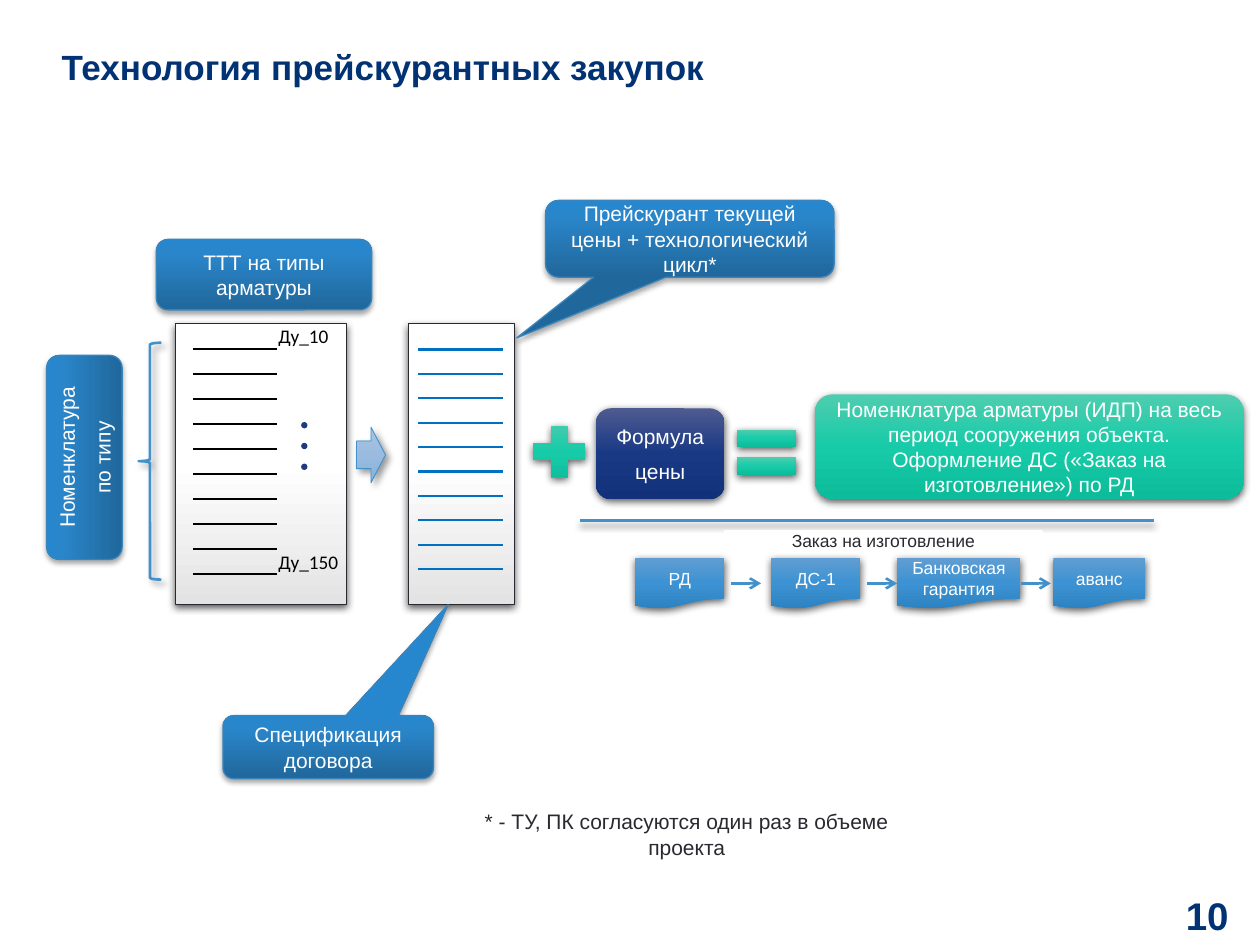
from dataclasses import dataclass
from typing import NamedTuple, Optional

from lxml.etree import SubElement
from pptx import Presentation
from pptx.dml.color import RGBColor as RGB
from pptx.enum.shapes import MSO_CONNECTOR as Connector, MSO_SHAPE as Geo
from pptx.enum.text import MSO_ANCHOR as Anchor, PP_ALIGN as Align
from pptx.oxml.ns import qn
from pptx.util import Inches, Pt


class Gradient(NamedTuple):
    stops: tuple
    angle: int = 90


class Shadow(NamedTuple):
    alpha: int
    blur: float
    distance: float
    angle: int = 90


class Line(NamedTuple):
    color: str
    width: float


class Look(NamedTuple):
    fill: object = None
    line: Optional[Line] = None
    shadow: Optional[Shadow] = None


GREEN = Gradient(((0, "4ECDAF"), (50, "17CBA8"), (100, "0DBC9A")))
DEEP = Shadow(63, 4.5, 1.5)
SOFT = Shadow(40, 4, 3, 45)


@dataclass(frozen=True)
class Theme:
    font: str = "Arial"
    table_font: str = "Calibri"
    heading: str = "003274"
    ink: str = "29292F"
    white: str = "FFFFFF"
    black: str = "000000"
    price_line: str = "0070C0"
    number_size: int = 22
    title_size: int = 20
    body_size: int = 12
    table_size: int = 11
    step_size: int = 10
    empty_size: int = 8
    no_grid: str = "{2D5ABB26-0587-4C30-8999-92F81FD0307C}"
    accent: Line = Line("4391CB", 1.5)
    rule_shadow: Shadow = Shadow(40, 4, 3)
    paper: Look = Look(Gradient(((0, "FFFFFF"), (50, "FFFFFF"), (100, "E3E3E3"))),
                       Line("29292F", 0.5), DEEP)
    label: Look = Look(Gradient(((0, "20679B"), (80, "2A86CA"), (100, "2787CE")), 270),
                       Line("3A84BC", 0.75), Shadow(35, 3.1, 1.8))
    arrow: Look = Look(Gradient(((0, "A8C5E3"), (50, "9ABBDE"), (100, "88B2DD"))),
                       Line("4391CB", 0.5), SOFT)
    step: Look = Look(Gradient(((0, "609DD2"), (50, "3C92D2"), (100, "2E83C2"))), None, DEEP)
    formula: Look = Look(Gradient(((0, "4E5B90"), (50, "193985"), (100, "12317A"))), None, DEEP)
    result: Look = Look(GREEN, None, DEEP)
    brace: Look = Look(None, Line("4391CB", 1.5), SOFT)
    dot: Look = Look("1E3B80")
    note: Look = Look("FFFFFF", Line("FFFFFF", 1))


THEME = Theme()


class Label(NamedTuple):
    geo: Geo
    at: tuple
    lines: tuple
    look: Look = THEME.label
    adjustments: tuple = ()
    rotation: int = 0


class Step(NamedTuple):
    left: float
    width: float
    text: str


class PriceList(NamedTuple):
    sheet: tuple
    at: tuple
    color: str
    notes: dict


def style_font(font, size, color, bold=False, name=THEME.font) -> None:
    for key, value in {"name": name, "size": Pt(size), "bold": bold}.items():
        setattr(font, key, value)
    font.color.rgb = RGB.from_string(color)


def write(frame, lines, size, color, align=Align.CENTER, after=6, anchor=Anchor.MIDDLE,
          inset=None, bold=False) -> None:
    settings = {"word_wrap": True, "vertical_anchor": anchor}
    if inset is not None:
        settings |= {f"margin_{side}": Inches(inset) for side in ("left", "top", "right", "bottom")}
    for key, value in settings.items():
        setattr(frame, key, value)
    for index, line in enumerate(lines):
        paragraph = frame.add_paragraph() if index else frame.paragraphs[0]
        paragraph.alignment, paragraph.space_after = align, Pt(after)
        run = paragraph.add_run()
        run.text = line
        style_font(run.font, size, color, bold)


def add_color(parent, color, alpha=None) -> None:
    node = SubElement(parent, qn("a:srgbClr"), val=color)
    if alpha is not None:
        SubElement(node, qn("a:alpha"), val=str(alpha * 1000))


def add_shadow(properties, shadow: Optional[Shadow]) -> None:
    effects = properties.find(qn("a:effectLst"))
    if effects is None:
        effects = SubElement(properties, qn("a:effectLst"))
    if shadow:
        outer = SubElement(effects, qn("a:outerShdw"), blurRad=str(Pt(shadow.blur)),
                           dist=str(Pt(shadow.distance)), dir=str(shadow.angle * 60000),
                           algn="ctr", rotWithShape="0")
        add_color(outer, THEME.black, shadow.alpha)


def apply_gradient(shape, gradient: Gradient) -> None:
    shape.fill.gradient()
    node = shape._element.spPr.find(qn("a:gradFill"))
    node.set("rotWithShape", "1")
    for child in list(node):
        node.remove(child)
    stops = SubElement(node, qn("a:gsLst"))
    for position, color in gradient.stops:
        add_color(SubElement(stops, qn("a:gs"), pos=str(position * 1000)), color)
    SubElement(node, qn("a:lin"), ang=str(gradient.angle * 60000), scaled="0")


def draw(shapes, geo: Geo, at: tuple, look: Look):
    shape = shapes.add_shape(geo, *map(Inches, at))
    shape.shadow.inherit = False
    if isinstance(look.fill, Gradient):
        apply_gradient(shape, look.fill)
    elif look.fill:
        shape.fill.solid()
        shape.fill.fore_color.rgb = RGB.from_string(look.fill)
    else:
        shape.fill.background()
    if look.line:
        shape.line.color.rgb = RGB.from_string(look.line.color)
        shape.line.width = Pt(look.line.width)
    else:
        shape.line.fill.background()
    add_shadow(shape._element.spPr, look.shadow)
    return shape


def draw_line(shapes, left: float, right: float, y: float, arrow=False, shadow=None):
    line = shapes.add_connector(Connector.STRAIGHT, *map(Inches, (left, y, right, y)))
    line.line.color.rgb = RGB.from_string(THEME.accent.color)
    line.line.width = Pt(THEME.accent.width)
    if arrow:
        SubElement(line.line._get_or_add_ln(), qn("a:tailEnd"), type="arrow")
    add_shadow(line._element.spPr, shadow)
    return line


def draw_label(shapes, label: Label) -> None:
    shape = draw(shapes, label.geo, label.at, label.look)
    shape.rotation = label.rotation
    for index, value in enumerate(label.adjustments):
        shape.adjustments[index] = value
    write(shape.text_frame, label.lines, THEME.body_size, THEME.white)


def draw_price_list(shapes, prices: PriceList, rows=10, column=0.67) -> None:
    draw(shapes, Geo.RECTANGLE, prices.sheet, THEME.paper)
    left, top, height = prices.at
    columns = 2 if prices.notes else 1
    table = shapes.add_table(rows, columns, *map(Inches, (left, top, column * columns, height))).table
    table.first_row = table.horz_banding = False
    table._tbl.tblPr.find(qn("a:tableStyleId")).text = THEME.no_grid
    for row in range(rows):
        table.rows[row].height = Inches(height / rows)
        for col in range(columns):
            cell = table.cell(row, col)
            cell.fill.background()
            cell.vertical_anchor = Anchor.BOTTOM
            cell.margin_left = cell.margin_right = cell.margin_top = Inches(0.01)
            cell.margin_bottom = 0
            paragraph = cell.text_frame.paragraphs[0]
            if col and row in prices.notes:
                run = paragraph.add_run()
                run.text = prices.notes[row]
                style_font(run.font, THEME.table_size, THEME.black, name=THEME.table_font)
            else:
                paragraph._p.get_or_add_endParaRPr().set("sz", str(THEME.empty_size * 100))
        properties = table.cell(row, 0)._tc.get_or_add_tcPr()
        border = SubElement(properties, qn("a:lnB"), w=str(Pt(1.5)))
        add_color(SubElement(border, qn("a:solidFill")), prices.color)
        properties.insert(0, border)


def draw_steps(shapes, top=4.43, height=0.4) -> None:
    steps = (Step(5.04, 0.71, "РД"), Step(6.12, 0.71, "ДС-1"),
             Step(7.12, 0.98, "Банковская гарантия"), Step(8.36, 0.73, "аванс"))
    boxes = []
    for step in steps:
        box = draw(shapes, Geo.FLOWCHART_DOCUMENT, (step.left, top, step.width, height), THEME.step)
        write(box.text_frame, (step.text,), THEME.step_size, THEME.white, after=0)
        boxes.append(box)
    arrows = [draw_line(shapes, left, left + 0.24, top + height / 2, arrow=True)
              for left in (5.8, 6.88, 8.1)]
    guarantee = boxes[2]
    arrows[1].end_connect(guarantee, 1)
    arrows[2].begin_connect(guarantee, 3)


def main() -> None:
    deck = Presentation()
    deck.slide_width, deck.slide_height = Inches(10), Inches(7.5)
    shapes = deck.slides.add_slide(deck.slide_layouts[6]).shapes

    for at, text, size, align in (
            ((9.06, 7.06, 0.69, 0.41), "10", THEME.number_size, Align.RIGHT),
            ((0.49, 0, 8.26, 1.05), "Технология прейскурантных закупок", THEME.title_size, Align.LEFT)):
        box = shapes.add_textbox(*map(Inches, at))
        write(box.text_frame, (text,), size, THEME.heading, align, 0, inset=0, bold=True)

    draw_price_list(shapes, PriceList((1.39, 2.57, 1.36, 2.23), (1.53, 2.57, 1.99),
                                      THEME.black, {0: "Ду_10", 9: "Ду_150"}))
    draw_price_list(shapes, PriceList((3.24, 2.57, 0.84, 2.23), (3.32, 2.58, 1.94),
                                      THEME.price_line, {}))
    for index in range(3):
        draw(shapes, Geo.OVAL, (2.39, 3.35 + 0.165 * index, 0.05, 0.05), THEME.dot)
    draw(shapes, Geo.LEFT_BRACE, (1.1, 2.72, 0.18, 1.88), THEME.brace)
    draw(shapes, Geo.RIGHT_ARROW, (2.83, 3.39, 0.23, 0.44), THEME.arrow)
    draw(shapes, Geo.MATH_PLUS, (4.16, 3.31, 0.56, 0.55), THEME.result)
    equals = shapes.add_group_shape().shapes
    for top in (3.41, 3.63):
        draw(equals, Geo.RECTANGLE, (5.85, top, 0.47, 0.14), THEME.result)

    draw_line(shapes, 4.6, 9.16, 4.13, shadow=THEME.rule_shadow)
    for at, text, size in (
            ((3.79, 6.42, 3.32, 0.4), "* - ТУ, ПК согласуются один раз в объеме проекта", THEME.body_size),
            ((5.75, 4.21, 2.52, 0.17), "Заказ на изготовление", THEME.step_size)):
        note = draw(shapes, Geo.RECTANGLE, at, THEME.note)
        write(note.text_frame, (text,), size, THEME.ink, anchor=Anchor.TOP, inset=0)
    draw_steps(shapes)

    rounded, callout = Geo.ROUNDED_RECTANGLE, Geo.ROUNDED_RECTANGULAR_CALLOUT
    for label in (
            Label(rounded, (4.73, 3.24, 1.02, 0.72), ("Формула", "цены"), THEME.formula),
            Label(rounded, (6.47, 3.13, 3.4, 0.83),
                  ("Номенклатура арматуры (ИДП) на весь период сооружения объекта. "
                   "Оформление ДС («Заказ на изготовление») по РД",), THEME.result),
            Label(rounded, (-0.14, 3.33, 1.62, 0.6), ("Номенклатура", "по типу"), rotation=270),
            Label(rounded, (1.24, 1.9, 1.71, 0.56), ("ТТТ на типы арматуры",)),
            Label(callout, (4.33, 1.59, 2.29, 0.61),
                  ("Прейскурант текущей цены + технологический цикл*",), adjustments=(-0.6, 1.29, 0.17)),
            Label(callout, (1.77, 5.68, 1.67, 0.5), ("Спецификация договора",),
                  adjustments=(0.57, -2.26, 0.17))):
        draw_label(shapes, label)

    deck.save("out.pptx")


if __name__ == "__main__":
    main()
